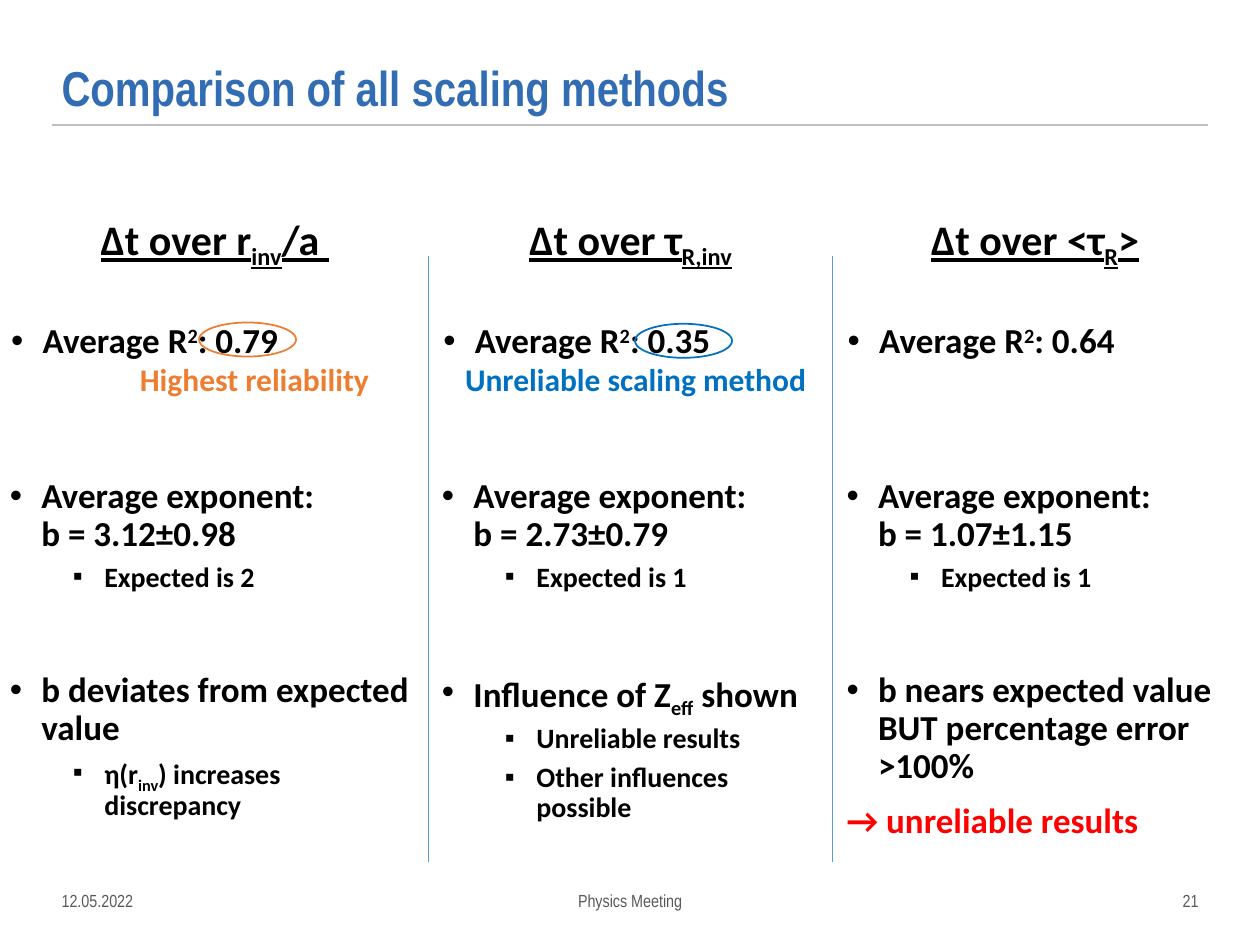
from dataclasses import dataclass

from lxml import etree
from pptx import Presentation
from pptx import util as u
from pptx.dml.color import RGBColor
from pptx.enum import shapes, text
from pptx.oxml import ns


@dataclass(frozen=True)
class Theme:
    """Hold the colours, fonts and type sizes of the page."""
    title: str = "326CB3"
    ink: str = "000000"
    footer: str = "595959"
    rule: str = "BFBFBF"
    divider: str = "5B9BD5"
    good: str = "ED7D31"
    poor: str = "0070C0"
    warning: str = "FF0000"
    narrow: str = "Arial Narrow"
    body: str = "Calibri"
    title_size: int = 28
    heading_size: int = 24
    point_size: int = 20
    note_size: int = 18
    detail_size: int = 16
    footer_size: int = 10


THEME = Theme()
BASELINES = {"_": "-25000", "^": "30000"}
ALIGN = text.PP_ALIGN
ANCHOR = text.MSO_ANCHOR
COLUMNS = [
    dict(left=-0.02, width=3.43, heading_left=0.48,
         heading=["Δt over r", "_inv", "/a "], fit="0.79",
         exponent="3.12±0.98", expected="2",
         finding=["b deviates from expected value"],
         details=[["η(r", "_inv", ") increases discrepancy"]]),
    dict(left=3.41, width=3.27, heading_left=3.78,
         heading=["Δt over τ", "_R,inv"], fit="0.35",
         exponent="2.73±0.79", expected="1",
         finding=["Influence of Z", "_eff", " shown"],
         details=[["Unreliable results"], ["Other influences possible"]]),
    dict(left=6.62, width=3.38, heading_left=6.99,
         heading=["Δt over <τ", "_R", ">"], fit="0.64",
         exponent="1.07±1.15", expected="1",
         finding=["b nears expected value BUT percentage error >100%"],
         details=[], verdict="→ unreliable results"),
]


def apply(target, values):
    """Set every attribute named in a dict of format values."""
    for name, value in values.items():
        setattr(target, name, value)


def add_box(page, left, top, width, height, anchor=ANCHOR.TOP):
    """Add a wrapping text box and return its text frame."""
    box = page.shapes.add_textbox(*map(u.Inches, (left, top, width, height)))
    apply(box.text_frame, dict(word_wrap=True, vertical_anchor=anchor))
    return box.text_frame


def add_bullet(para, mark, indent):
    """Give a paragraph a hanging bullet."""
    properties = para._p.get_or_add_pPr()
    properties.set("marL", str(u.Inches(indent)))
    properties.set("indent", str(u.Inches(-0.25)))
    font = etree.SubElement(properties, ns.qn("a:buFont"))
    font.set("typeface", "Arial")
    etree.SubElement(properties, ns.qn("a:buChar")).set("char", mark)


def write(frame, parts, size, color=THEME.ink, font=THEME.body, bold=True,
          underline=None, bullet=None, space=10, **layout):
    """Write a paragraph; a leading _ lowers a part and ^ raises it."""
    first = not frame.paragraphs[0].runs
    para = frame.paragraphs[0] if first else frame.add_paragraph()
    if bullet:
        add_bullet(para, *bullet)
    apply(para, dict(line_spacing=0.9, space_before=u.Pt(0 if first else space)))
    apply(para, layout)
    for part in parts:
        if part == "\n":
            para.add_line_break()
            continue
        shift = BASELINES.get(part[0])
        span = para.add_run()
        span.text = part[1:] if shift else part
        apply(span.font, dict(name=font, size=u.Pt(size), bold=bold,
                              underline=underline))
        span.font.color.rgb = RGBColor.from_string(color)
        if shift:
            span.font._element.set("baseline", shift)


def add_point(frame, parts):
    """Write a main bullet point."""
    write(frame, parts, THEME.point_size, bullet=("•", 0.25))


def add_detail(frame, parts):
    """Write a second-level bullet point."""
    write(frame, parts, THEME.detail_size, bullet=("▪", 0.75), space=5, level=1)


def add_line(page, start, end, color, width):
    """Draw a straight line without a shadow."""
    line = page.shapes.add_connector(shapes.MSO_CONNECTOR.STRAIGHT,
                                     *map(u.Inches, (*start, *end)))
    line.line.color.rgb = RGBColor.from_string(color)
    line.line.width = u.Pt(width)
    etree.SubElement(line._element.spPr, ns.qn("a:effectLst"))


def add_remark(page, ring_left, ring_top, left, width, words, color):
    """Ring a value and put a remark below it."""
    ring = page.shapes.add_shape(
        shapes.MSO_SHAPE.OVAL,
        *map(u.Inches, (ring_left, ring_top, 0.77, 0.27)))
    ring.shadow.inherit = False
    ring.fill.background()
    ring.line.color.rgb = RGBColor.from_string(color)
    ring.line.width = u.Pt(1)
    write(add_box(page, left, 2.84, width, 0.83), [words], THEME.note_size,
          color, alignment=ALIGN.CENTER)


def add_footer(page, left, width, words, alignment):
    """Add one part of the footer."""
    write(add_box(page, left, 6.95, width, 0.4, ANCHOR.MIDDLE), [words],
          THEME.footer_size, THEME.footer, THEME.narrow, False,
          alignment=alignment, line_spacing=1.0)


def add_column(page, column):
    """Add the heading and the three groups of points of one method."""
    left, width = column["left"], column["width"]
    write(add_box(page, column["heading_left"], 1.65, 2.45, 0.4),
          column["heading"], THEME.heading_size, underline=True,
          alignment=ALIGN.CENTER)
    add_point(add_box(page, left + 0.01, 2.52, 3.27, 0.66),
              ["Average R", "^2", f": {column['fit']}"])
    exponent = add_box(page, left, 3.75, width, 1.12)
    add_point(exponent, ["Average exponent:", "\n", f"b = {column['exponent']}"])
    add_detail(exponent, [f"Expected is {column['expected']}"])
    finding = add_box(page, left, 5.29, width, 1.2)
    add_point(finding, column["finding"])
    for detail in column["details"]:
        add_detail(finding, detail)
    if "verdict" in column:
        write(finding, [column["verdict"]], THEME.point_size, THEME.warning)


def main():
    """Build the page and save the deck."""
    deck = Presentation()
    apply(deck, dict(slide_width=u.Inches(10), slide_height=u.Inches(7.5)))
    page = deck.slides.add_slide(deck.slide_layouts[6])
    add_line(page, (0.41, 0.99), (9.59, 0.99), THEME.rule, 1)
    write(add_box(page, 0.39, 0.28, 7.46, 0.7, ANCHOR.BOTTOM),
          ["Comparison of all scaling methods"], THEME.title_size,
          THEME.title, THEME.narrow)
    for x in (3.4, 6.61):
        add_line(page, (x, 2.03), (x, 6.84), THEME.divider, 0.5)
    for column in COLUMNS:
        add_column(page, column)
    add_remark(page, 1.58, 2.56, 0, 4.04, "Highest reliability", THEME.good)
    add_remark(page, 5.04, 2.57, 2.32, 5.45, "Unreliable scaling method",
               THEME.poor)
    add_footer(page, 0.39, 0.89, "12.05.2022", ALIGN.LEFT)
    add_footer(page, 1.49, 7.02, "Physics Meeting", ALIGN.CENTER)
    add_footer(page, 8.72, 0.89, "21", ALIGN.RIGHT)
    deck.save("out.pptx")


if __name__ == "__main__":
    main()
